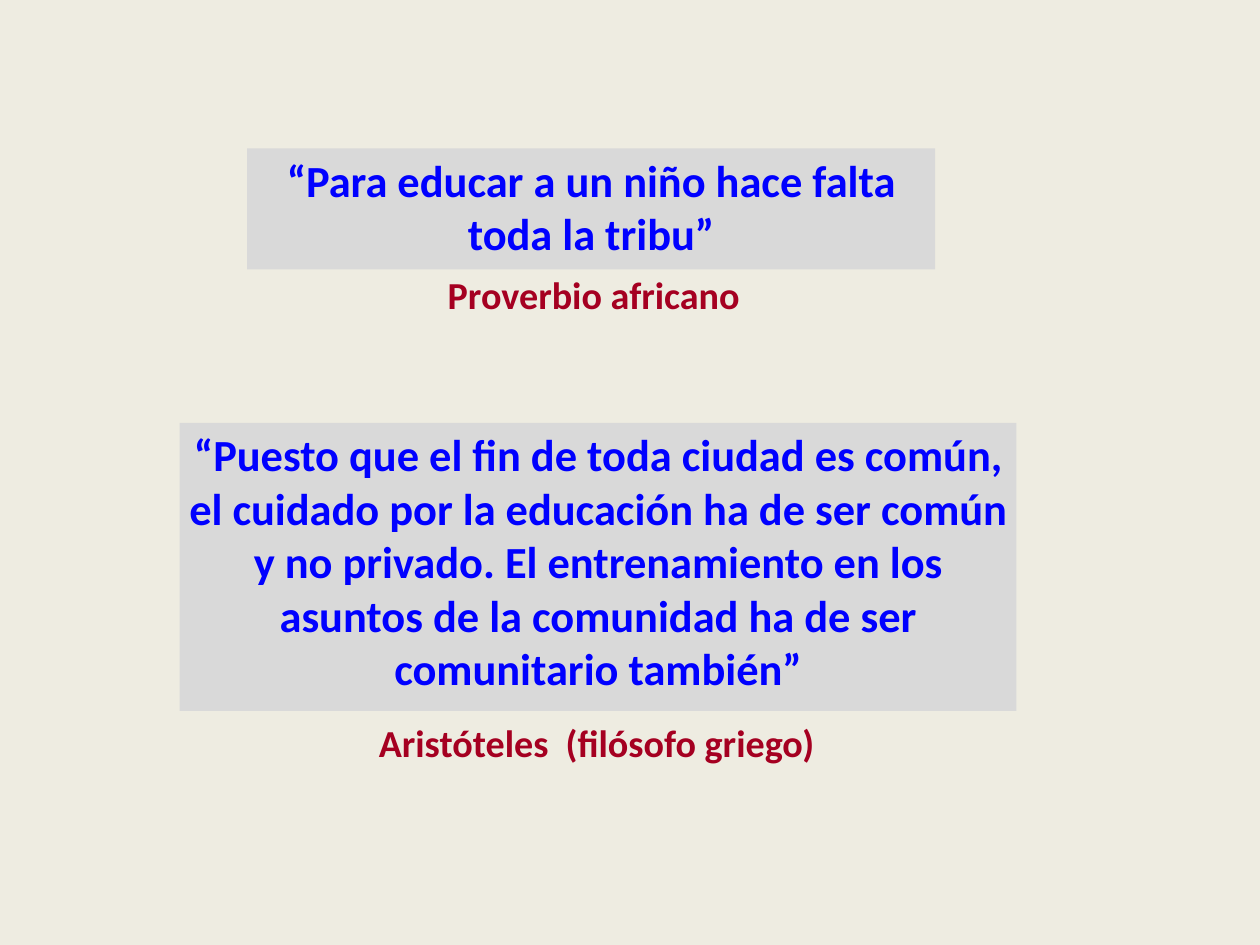
"""Builds a slide with two quotations on education and their authors."""
import pptx
import pptx.dml.color
import pptx.enum.shapes
import pptx.enum.text
import pptx.util

Cm = pptx.util.Cm
RGBColor = pptx.dml.color.RGBColor

CREAM = RGBColor(0xEE, 0xEC, 0xE1)
GREY = RGBColor(0xD9, 0xD9, 0xD9)
BLUE = RGBColor(0x00, 0x00, 0xFF)
CRIMSON = RGBColor(0xA5, 0x00, 0x21)

QUOTES = [
    ("“Para educar a un niño hace falta toda la tribu”",
     (5.49, 3.3, 15.29, 2.69)),
    ("“Puesto que el fin de toda ciudad es común, el cuidado por la "
     "educación ha de ser común y no privado. El entrenamiento en los "
     "asuntos de la comunidad ha de ser comunitario también”",
     (3.99, 9.4, 18.6, 6.4)),
]
AUTHORS = [
    ("Proverbio africano", (5.69, 6.2, 15.01, 1.09), 0.7),
    ("Aristóteles  (filósofo griego)", (5.41, 16, 15.7, 1.09), 0.9),
]

FRAME_FORMAT = {
    "word_wrap": True,
    "vertical_anchor": pptx.enum.text.MSO_ANCHOR.TOP,
    "margin_left": Cm(0.2),
    "margin_right": Cm(0.2),
    "margin_top": Cm(0.1),
    "margin_bottom": Cm(0.1),
}
QUOTE_FONT = {"name": "Calibri", "size": pptx.util.Pt(28), "bold": True}
AUTHOR_FONT = {**QUOTE_FONT, "size": pptx.util.Pt(24)}


def apply_format(target, values):
    for attribute, value in values.items():
        setattr(target, attribute, value)


def write(box, wording, font, colour, spacing):
    apply_format(box.text_frame, FRAME_FORMAT)
    paragraph = box.text_frame.paragraphs[0]
    apply_format(paragraph, {"alignment": pptx.enum.text.PP_ALIGN.CENTER,
                             "line_spacing": spacing})
    run = paragraph.add_run()
    run.text = wording
    apply_format(run.font, font)
    run.font.color.rgb = colour


def main():
    deck = pptx.Presentation()
    apply_format(deck, {"slide_width": Cm(28), "slide_height": Cm(21)})
    slide = deck.slides.add_slide(deck.slide_layouts[6])
    slide.background.fill.solid()
    slide.background.fill.fore_color.rgb = CREAM

    for quote, place in QUOTES:
        panel = slide.shapes.add_shape(
            pptx.enum.shapes.MSO_SHAPE.RECTANGLE, *map(Cm, place))
        panel.shadow.inherit = False
        panel.fill.solid()
        panel.fill.fore_color.rgb = GREY
        panel.line.fill.background()
        write(panel, quote, QUOTE_FONT, BLUE, 1.0)

    for author, place, spacing in AUTHORS:
        caption = slide.shapes.add_textbox(*map(Cm, place))
        write(caption, author, AUTHOR_FONT, CRIMSON, spacing)

    deck.save("out.pptx")


if __name__ == "__main__":
    main()
